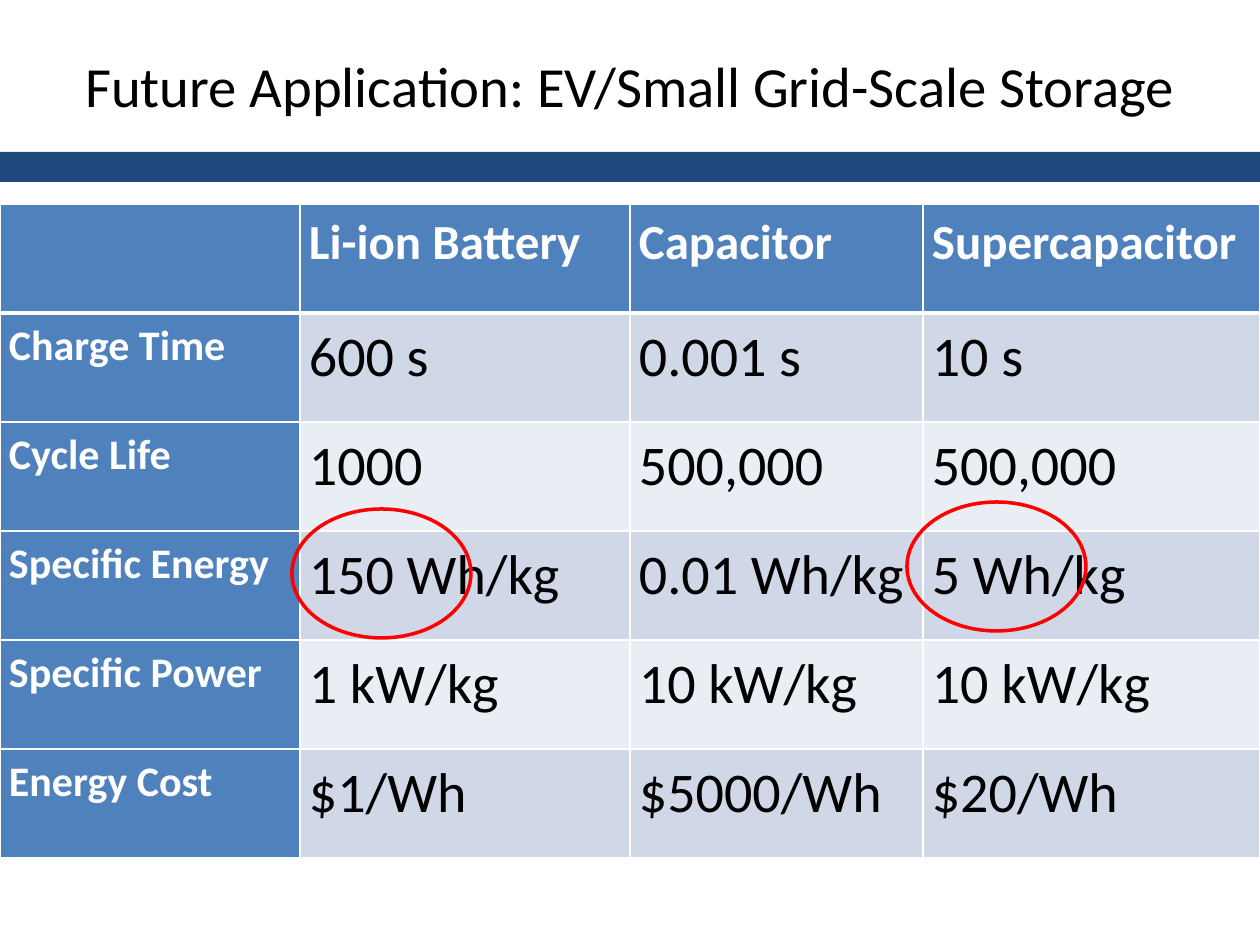
from dataclasses import dataclass

from lxml import etree
from pptx import Presentation
from pptx.dml.color import RGBColor
from pptx.enum.shapes import MSO_SHAPE
from pptx.enum.text import MSO_ANCHOR, PP_ALIGN
from pptx.oxml.ns import qn
from pptx.util import Emu, Pt

OVAL = MSO_SHAPE.OVAL
RECTANGLE = MSO_SHAPE.RECTANGLE
MIDDLE = MSO_ANCHOR.MIDDLE
CENTER = PP_ALIGN.CENTER

BLACK = RGBColor(0x00, 0x00, 0x00)
WHITE = RGBColor(0xFF, 0xFF, 0xFF)
RED = RGBColor(0xFF, 0x00, 0x00)
NAVY = RGBColor(0x1F, 0x49, 0x7D)
BLUE = RGBColor(0x4F, 0x81, 0xBD)
BAND_DARK = RGBColor(0xD0, 0xD8, 0xE8)
BAND_LIGHT = RGBColor(0xE9, 0xED, 0xF4)

FONT = "Calibri"
TITLE = "Future Application: EV/Small Grid-Scale Storage"
COLUMN_WIDTHS = (300, 330, 293, 337)
ROW_HEIGHT = 109
ROWS = (
    ("", "Li-ion Battery", "Capacitor", "Supercapacitor"),
    ("Charge Time", "600 s", "0.001 s", "10 s"),
    ("Cycle Life", "1000", "500,000", "500,000"),
    ("Specific Energy", "150 Wh/kg", "0.01 Wh/kg", "5 Wh/kg"),
    ("Specific Power", "1 kW/kg", "10 kW/kg", "10 kW/kg"),
    ("Energy Cost", "$1/Wh", "$5000/Wh", "$20/Wh"),
)


@dataclass(frozen=True)
class Box:
    left: int
    top: int
    width: int
    height: int

    def emu(self) -> tuple:
        return tuple(map(px, (self.left, self.top, self.width, self.height)))


@dataclass(frozen=True)
class CellStyle:
    fill: RGBColor
    color: RGBColor
    size: int
    bold: bool


TITLE_BOX = Box(63, 6, 1134, 158)
BAR_BOX = Box(0, 152, 1260, 30)
TABLE_BOX = Box(0, 204, sum(COLUMN_WIDTHS), ROW_HEIGHT * len(ROWS))
HIGHLIGHTS = (Box(907, 502, 179, 129), Box(292, 509, 179, 129))

HEADER = CellStyle(BLUE, WHITE, 28, True)
LABEL = CellStyle(BLUE, WHITE, 24, True)
DARK_VALUE = CellStyle(BAND_DARK, BLACK, 32, False)
LIGHT_VALUE = CellStyle(BAND_LIGHT, BLACK, 32, False)


def px(length: int) -> Emu:
    return Emu(round(length * 914400 / 126))


def set_font(para, size: float, color: RGBColor, bold: bool = False) -> None:
    para.font.name = FONT
    para.font.size = Pt(size)
    para.font.bold = bold
    para.font.color.rgb = color


def add_title(page) -> None:
    frame = page.shapes.add_textbox(*TITLE_BOX.emu()).text_frame
    frame.word_wrap = True
    frame.vertical_anchor = MIDDLE
    para = frame.paragraphs[0]
    para.text = TITLE
    para.alignment = CENTER
    set_font(para, 32.4, BLACK)


def cell_style(row: int, column: int) -> CellStyle:
    if row == 0:
        return HEADER
    if column == 0:
        return LABEL
    return DARK_VALUE if row % 2 else LIGHT_VALUE


def add_border(cell, side: str, width: int) -> None:
    line = etree.SubElement(cell._tc.get_or_add_tcPr(), qn(f"a:ln{side}"), w=str(Pt(width)))
    fill = etree.SubElement(line, qn("a:solidFill"))
    etree.SubElement(fill, qn("a:srgbClr"), val=str(WHITE))


def fill_cell(cell, text: str, row: int, column: int) -> None:
    style = cell_style(row, column)
    cell.margin_left = cell.margin_right = px(9)
    cell.margin_top = cell.margin_bottom = 0
    for side in "LRTB":
        heavy = (row, side) in ((0, "B"), (1, "T"))
        add_border(cell, side, 3 if heavy else 1)
    cell.fill.solid()
    cell.fill.fore_color.rgb = style.fill
    para = cell.text_frame.paragraphs[0]
    para.line_spacing = 1.15
    para.space_after = Pt(6)
    set_font(para, style.size, style.color, style.bold)
    if text:
        para.text = text


def add_comparison(page) -> None:
    table = page.shapes.add_table(len(ROWS), len(COLUMN_WIDTHS), *TABLE_BOX.emu()).table
    table.first_col = True
    for column, width in zip(table.columns, COLUMN_WIDTHS):
        column.width = px(width)
    for row, texts in enumerate(ROWS):
        table.rows[row].height = px(ROW_HEIGHT)
        for column, text in enumerate(texts):
            fill_cell(table.cell(row, column), text, row, column)


def add_highlight(page, box: Box) -> None:
    ring = page.shapes.add_shape(OVAL, *box.emu())
    ring.shadow.inherit = False
    ring.fill.background()
    ring.line.color.rgb = RED
    ring.line.width = Pt(2)


def add_bar(page) -> None:
    bar = page.shapes.add_shape(RECTANGLE, *BAR_BOX.emu())
    bar.shadow.inherit = False
    bar.fill.solid()
    bar.fill.fore_color.rgb = NAVY
    bar.line.fill.background()


def main() -> None:
    deck = Presentation()
    deck.slide_width, deck.slide_height = px(1260), px(945)
    page = deck.slides.add_slide(deck.slide_layouts[6])
    add_title(page)
    add_comparison(page)
    for box in HIGHLIGHTS:
        add_highlight(page, box)
    add_bar(page)
    deck.save("out.pptx")


if __name__ == "__main__":
    main()
